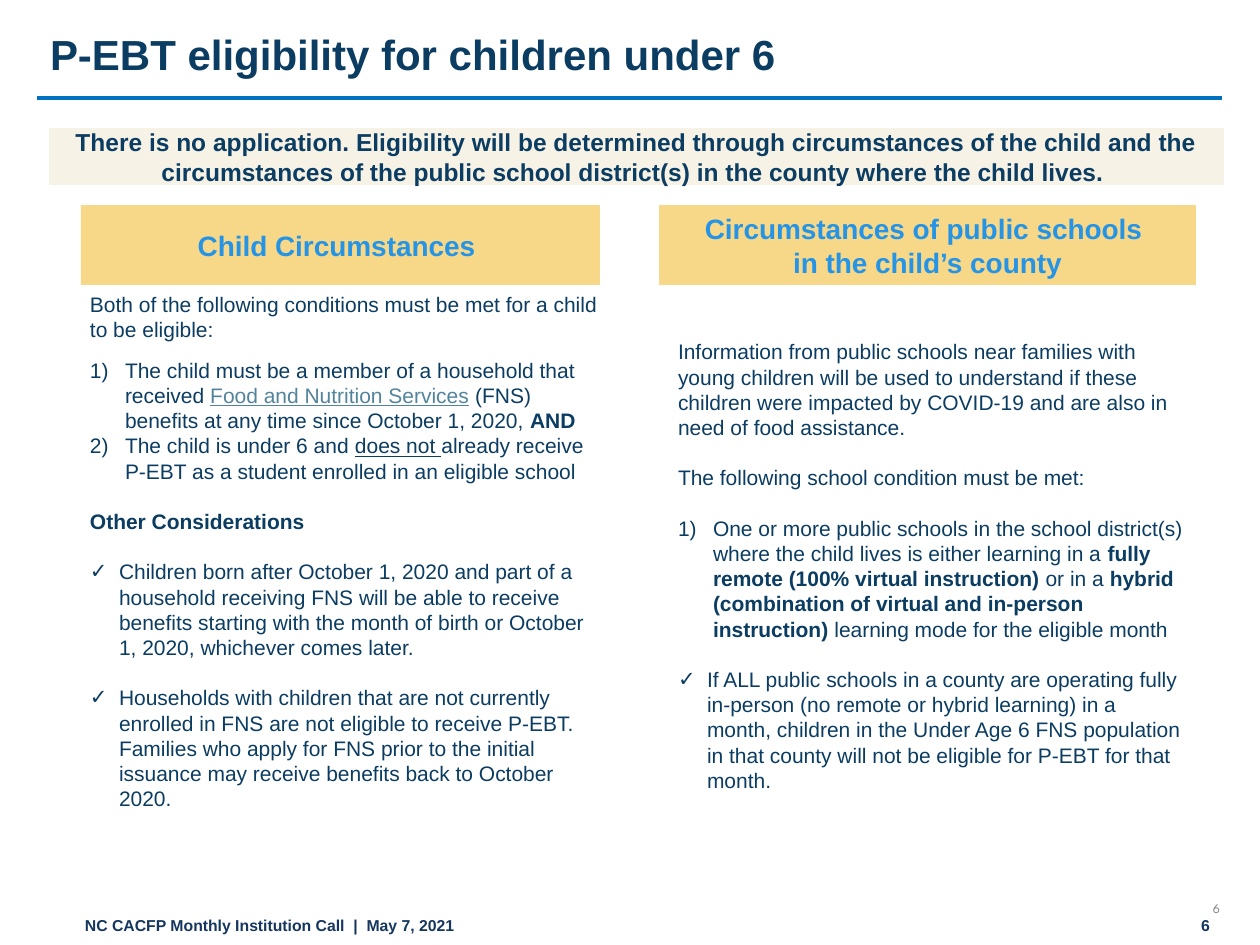
from lxml import etree
from pptx import Presentation
from pptx.dml.color import RGBColor
from pptx.enum.shapes import MSO_CONNECTOR, MSO_SHAPE
from pptx.enum.text import MSO_ANCHOR, MSO_AUTO_SIZE, PP_ALIGN
from pptx.oxml.ns import qn
from pptx.util import Pt

PX = 914400 / 126
LEFT, CENTER = PP_ALIGN.LEFT, PP_ALIGN.CENTER
TOP, MIDDLE = MSO_ANCHOR.TOP, MSO_ANCHOR.MIDDLE
NAVY, FOOTER_NAVY, GREY = "0B3C61", "15365E", "808080"
HEADING_BLUE, LINK_BLUE, RULE_BLUE = "2694E6", "52849C", "0070C0"
GOLD, OCHRE = "F6D888", "B2850D"
BLANK_LINE = 14.4
NUMBER, CHECK = "number", "check"
HANGING = {NUMBER: 35, CHECK: 29}
BOLD, UNDERLINE = {"bold": True}, {"underline": True}

CHILD_CONDITIONS = [
    (None, 0, 9, [("Both of the following conditions must be met for a child to be eligible:", {})]),
    (NUMBER, 0, 0, [
        ("The child must be a member of a household that received ", {}),
        ("Food and Nutrition Services", {"color": LINK_BLUE, "underline": True}),
        (" (FNS) benefits at any time since October 1, 2020, ", {}),
        ("AND", BOLD)]),
    (NUMBER, 0, 0, [
        ("The child is under 6 and ", {}),
        ("does not ", UNDERLINE),
        ("already receive P-EBT as a student enrolled in an eligible school", {})]),
    (None, BLANK_LINE, 0, [("Other Considerations", BOLD)]),
    (CHECK, BLANK_LINE, 0, [(
        "Children born after October 1, 2020 and part of a household receiving FNS "
        "will be able to receive benefits starting with the month of birth or "
        "October 1, 2020, whichever comes later.", {})]),
    (CHECK, BLANK_LINE, 0, [(
        "Households with children that are not currently enrolled in FNS are not "
        "eligible to receive P-EBT. Families who apply for FNS prior to the initial "
        "issuance may receive benefits back to October 2020.", {})]),
]
SCHOOL_CONDITIONS = [
    (None, 0, 0, [(
        "Information from public schools near families with young children will be "
        "used to understand if these children were impacted by COVID-19 and are also "
        "in need of food assistance.", {})]),
    (None, BLANK_LINE, 0, [("The following school condition must be met:", {})]),
    (NUMBER, BLANK_LINE, 0, [
        ("One or more public schools in the school district(s) where the child lives "
         "is either learning in a ", {}),
        ("fully remote (100% virtual instruction) ", BOLD),
        ("or in a ", {}),
        ("hybrid (combination of virtual and in-person instruction) ", BOLD),
        ("learning mode for the eligible month", {})]),
    (CHECK, BLANK_LINE, 0, [(
        "If ALL public schools in a county are operating fully in-person (no remote or "
        "hybrid learning) in a month, children in the Under Age 6 FNS population in "
        "that county will not be eligible for P-EBT for that month.", {})]),
]


def px(length):
    """Turn pixels into EMU."""
    return round(length * PX)


def rgb(color):
    """Turn a hex string into a colour."""
    return RGBColor.from_string(color)


def place(shape, box):
    """Move and size a shape."""
    shape.left, shape.top, shape.width, shape.height = map(px, box)


def set_frame(shape, anchor, insets=(13, 6)):
    """Set wrapping, anchor and insets, and return the text frame."""
    frame = shape.text_frame
    frame.word_wrap = True
    frame.auto_size = MSO_AUTO_SIZE.NONE
    frame.vertical_anchor = anchor
    frame.margin_left = frame.margin_right = px(insets[0])
    frame.margin_top = frame.margin_bottom = px(insets[1])
    return frame


def add_run(paragraph, text, size, color=NAVY, bold=False, underline=False, font="Arial"):
    """Add one formatted run."""
    run = paragraph.add_run()
    run.text = text
    run.font.name, run.font.size = font, Pt(size)
    run.font.bold, run.font.underline = bold, underline
    run.font.color.rgb = rgb(color)


def write_lines(frame, lines, size, align=LEFT, **style):
    """Write one paragraph per line in a single style."""
    for index, line in enumerate(lines):
        paragraph = frame.add_paragraph() if index else frame.paragraphs[0]
        paragraph.alignment = align
        add_run(paragraph, line, size, **style)


def set_bullet(paragraph, kind):
    """Give a paragraph a number, a check mark or no bullet."""
    properties = paragraph._p.get_or_add_pPr()
    hanging = px(HANGING.get(kind, 0))
    properties.set("marL", str(hanging))
    properties.set("indent", str(-hanging))
    if kind == NUMBER:
        etree.SubElement(properties, qn("a:buFont"), typeface="Arial")
        etree.SubElement(properties, qn("a:buAutoNum"), type="arabicParenR")
    elif kind == CHECK:
        etree.SubElement(properties, qn("a:buFont"), typeface="Arial")
        etree.SubElement(properties, qn("a:buChar"), char="✓")
    else:
        etree.SubElement(properties, qn("a:buNone"))


def fill_body(placeholder, box, anchor, insets, content):
    """Place a body placeholder and write its list."""
    place(placeholder, box)
    frame = set_frame(placeholder, anchor, insets)
    for index, (kind, before, after, runs) in enumerate(content):
        paragraph = frame.add_paragraph() if index else frame.paragraphs[0]
        paragraph.alignment = LEFT
        paragraph.space_before, paragraph.space_after = Pt(before), Pt(after)
        set_bullet(paragraph, kind)
        for text, style in runs:
            add_run(paragraph, text, 12, **style)


def add_panel(slide, box, fill, lines, size, color, insets=(13, 6)):
    """Add a filled rectangle with bold centred text."""
    panel = slide.shapes.add_shape(MSO_SHAPE.RECTANGLE, *map(px, box))
    panel.shadow.inherit = False
    panel.fill.solid()
    panel.fill.fore_color.rgb = rgb(fill)
    panel.line.fill.background()
    write_lines(set_frame(panel, MIDDLE, insets), lines, size, CENTER, color=color, bold=True)
    return panel


def set_opacity(shape, percent):
    """Make a solid fill partly transparent."""
    color = shape.fill._xPr.find(qn("a:solidFill"))[0]
    etree.SubElement(color, qn("a:alpha"), val=str(percent * 1000))


def add_label(slide, box, text, size, anchor=TOP, insets=(13, 6), align=LEFT, **style):
    """Add a one-line text box."""
    label = slide.shapes.add_textbox(*map(px, box))
    write_lines(set_frame(label, anchor, insets), [text], size, align, **style)


def add_rule(slide, left, right, top):
    """Add the horizontal line below the title."""
    rule = slide.shapes.add_connector(
        MSO_CONNECTOR.STRAIGHT, px(left), px(top), px(right), px(top))
    rule.line.color.rgb = rgb(RULE_BLUE)
    rule.line.width = Pt(2.25)
    etree.SubElement(rule._element.spPr, qn("a:effectLst"))


def main():
    """Build the eligibility slide."""
    presentation = Presentation()
    presentation.slide_width, presentation.slide_height = px(1260), px(945)
    slide = presentation.slides.add_slide(presentation.slide_layouts[3])
    title, child_body, school_body = slide.placeholders

    add_label(slide, (72, 910, 1101, 37), "NC CACFP Monthly Institution Call  |  May 7, 2021",
              9, color=FOOTER_NAVY, bold=True)
    add_label(slide, (1188, 910, 55, 38), "6", 9, color=FOOTER_NAVY, bold=True)
    add_label(slide, (1195, 900, 43, 16), "6", 7.5, MIDDLE, (0, 0), CENTER,
              color=GREY, font="League Spartan")
    add_rule(slide, 37, 1222, 98)

    place(title, (37, 16, 1188, 82))
    write_lines(set_frame(title, MIDDLE), ["P-EBT eligibility for children under 6"], 24, bold=True)
    title.text_frame.paragraphs[0].line_spacing = 0.9

    banner = add_panel(slide, (49, 128, 1175, 57), OCHRE, [
        "There is no application. Eligibility will be determined through circumstances of the "
        "child and the circumstances of the public school district(s) in the county where the "
        "child lives. "], 14, NAVY, (9, 5))
    set_opacity(banner, 10)
    add_panel(slide, (81, 205, 519, 80), GOLD, ["Child Circumstances "], 16, HEADING_BLUE)
    add_panel(slide, (659, 205, 537, 80), GOLD,
              ["Circumstances of public schools ", "in the child’s county"], 16, HEADING_BLUE)
    fill_body(child_body, (81, 284, 532, 534), MIDDLE, (9, 5), CHILD_CONDITIONS)
    fill_body(school_body, (665, 333, 532, 496), TOP, (13, 6), SCHOOL_CONDITIONS)

    presentation.save("out.pptx")


if __name__ == "__main__":
    main()
